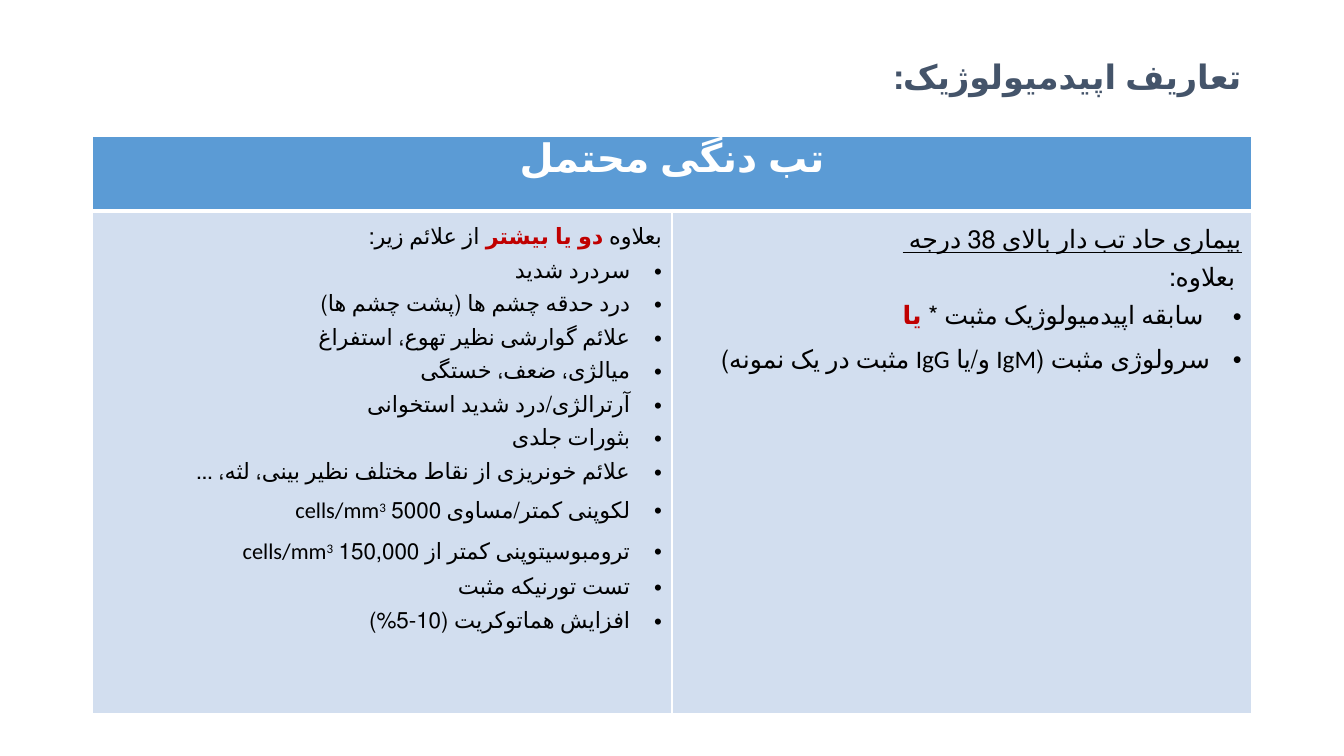
from lxml import etree
from pptx import Presentation
from pptx.dml.color import RGBColor
from pptx.enum.lang import MSO_LANGUAGE_ID
from pptx.enum.text import MSO_ANCHOR, PP_ALIGN
from pptx.oxml.ns import qn
from pptx.util import Pt

TOP = MSO_ANCHOR.TOP
RIGHT, CENTER = PP_ALIGN.RIGHT, PP_ALIGN.CENTER
PERSIAN = MSO_LANGUAGE_ID.FARSI

COLORS = {"title": "44546A", "header": "5B9BD5", "body": "D2DEEF",
          "white": "FFFFFF", "black": "000000", "red": "C00000"}
FONT = "Calibri"

TITLE = "تعاریف اپیدمیولوژیک:"
HEADER = "تب دنگی محتمل"
SYMPTOMS = [
    ("plain", [("بعلاوه ", ""), ("دو یا بیشتر ", "key"), ("از علائم زیر:", "")]),
    ("bullet", [("سردرد شدید", "")]),
    ("bullet", [("درد حدقه چشم ها (پشت چشم ها)", "")]),
    ("bullet", [("علائم گوارشی نظیر تهوع، استفراغ", "")]),
    ("bullet", [("میالژی، ضعف، خستگی", "")]),
    ("bullet", [("آرترالژی/درد شدید استخوانی", "")]),
    ("bullet", [("بثورات جلدی", "")]),
    ("bullet", [("علائم خونریزی از نقاط مختلف نظیر بینی، لثه، ...", "")]),
    ("bullet", [("لکوپنی کمتر/مساوی 5000 cells/mm", ""), ("3", "super")]),
    ("bullet", [("ترومبوسیتوپنی کمتر از 150,000 cells/mm", ""), ("3", "super")]),
    ("bullet", [("تست تورنیکه مثبت", "")]),
    ("bullet", [("افزایش هماتوکریت (10-5%)", "")]),
]
CRITERIA = [
    ("plain", [("بیماری حاد تب دار بالای 38 درجه ", "underline")]),
    ("plain", [(" بعلاوه:", "")]),
    ("bullet", [(" سابقه اپیدمیولوژیک مثبت *\t", ""), ("یا", "key")]),
    ("bullet", [("سرولوژی مثبت (IgM و/یا IgG مثبت در یک نمونه)", "")]),
]
INDENTS = {"plain": (0, 0), "bullet": (22.5, -22.5)}
TAB_STOP = 242

LEFT, WIDTH = 66, 828
TABLE_TOP, ROW_HEIGHTS = 97.5, (53, 359.5)


def rgb(name):
    return RGBColor.from_string(COLORS[name])


def set_direction(p, align, spacing, kind="plain"):
    p.alignment = align
    p.line_spacing = spacing
    pPr = p._p.get_or_add_pPr()
    margin, indent = INDENTS[kind]
    pPr.set("rtl", "1")
    pPr.set("marL", str(Pt(margin)))
    pPr.set("indent", str(Pt(indent)))
    if kind == "bullet":
        etree.SubElement(pPr, qn("a:buFont"), typeface="Arial")
        etree.SubElement(pPr, qn("a:buChar"), char="•")
    else:
        etree.SubElement(pPr, qn("a:buNone"))
    if "\t" in "".join(r.text for r in p.runs):
        tabs = etree.SubElement(pPr, qn("a:tabLst"))
        etree.SubElement(tabs, qn("a:tab"), pos=str(Pt(TAB_STOP)), algn="l")


def set_font(r, size, color, bold=False):
    r.font.name = FONT
    r.font.language_id = PERSIAN
    r.font.size = Pt(size)
    r.font.bold = bold
    r.font.color.rgb = rgb(color)


def set_cell(cell, fill, bottom=1):
    tcPr = cell._tc.get_or_add_tcPr()
    for side in ("L", "R", "T", "B"):
        weight = bottom if side == "B" else 1
        line = etree.SubElement(tcPr, qn("a:ln" + side), w=str(Pt(weight)))
        solid = etree.SubElement(line, qn("a:solidFill"))
        etree.SubElement(solid, qn("a:srgbClr"), val=COLORS["white"])
    cell.fill.solid()
    cell.fill.fore_color.rgb = rgb(fill)


def fill_list(cell, items, size):
    tf = cell.text_frame
    for i, (kind, parts) in enumerate(items):
        p = tf.paragraphs[0] if i == 0 else tf.add_paragraph()
        for text, style in parts:
            r = p.add_run()
            r.text = text
            key = style == "key"
            set_font(r, size, "red" if key else "black", key)
            if style == "underline":
                r.font.underline = True
            if style == "super":
                r._r.get_or_add_rPr().set("baseline", "30000")
        set_direction(p, RIGHT, 1.5, kind)


prs = Presentation()
prs.slide_width, prs.slide_height = Pt(960), Pt(540)
s = prs.slides.add_slide(prs.slide_layouts[5])

title = s.shapes.title
title.left, title.top, title.width, title.height = Pt(LEFT), Pt(29), Pt(WIDTH), Pt(104)
tf = title.text_frame
tf.text = TITLE
tf.vertical_anchor = TOP
tf.margin_top = Pt(14.5)
set_direction(tf.paragraphs[0], RIGHT, 0.9)
set_font(tf.paragraphs[0].runs[0], 24, "title", True)

table = s.shapes.add_table(2, 2, Pt(LEFT), Pt(TABLE_TOP), Pt(WIDTH),
                           Pt(sum(ROW_HEIGHTS))).table
for row, height in zip(table.rows, ROW_HEIGHTS):
    row.height = Pt(height)
for column in table.columns:
    column.width = Pt(WIDTH / 2)

header = table.cell(0, 0)
header.merge(table.cell(0, 1))
header.text_frame.text = HEADER
set_direction(header.text_frame.paragraphs[0], CENTER, 1)
set_font(header.text_frame.paragraphs[0].runs[0], 28, "white", True)
for cell in (header, table.cell(0, 1)):
    set_cell(cell, "header", 3)

for col, (items, size) in enumerate([(SYMPTOMS, 16), (CRITERIA, 18)]):
    cell = table.cell(1, col)
    fill_list(cell, items, size)
    set_cell(cell, "body")

prs.save("out.pptx")
